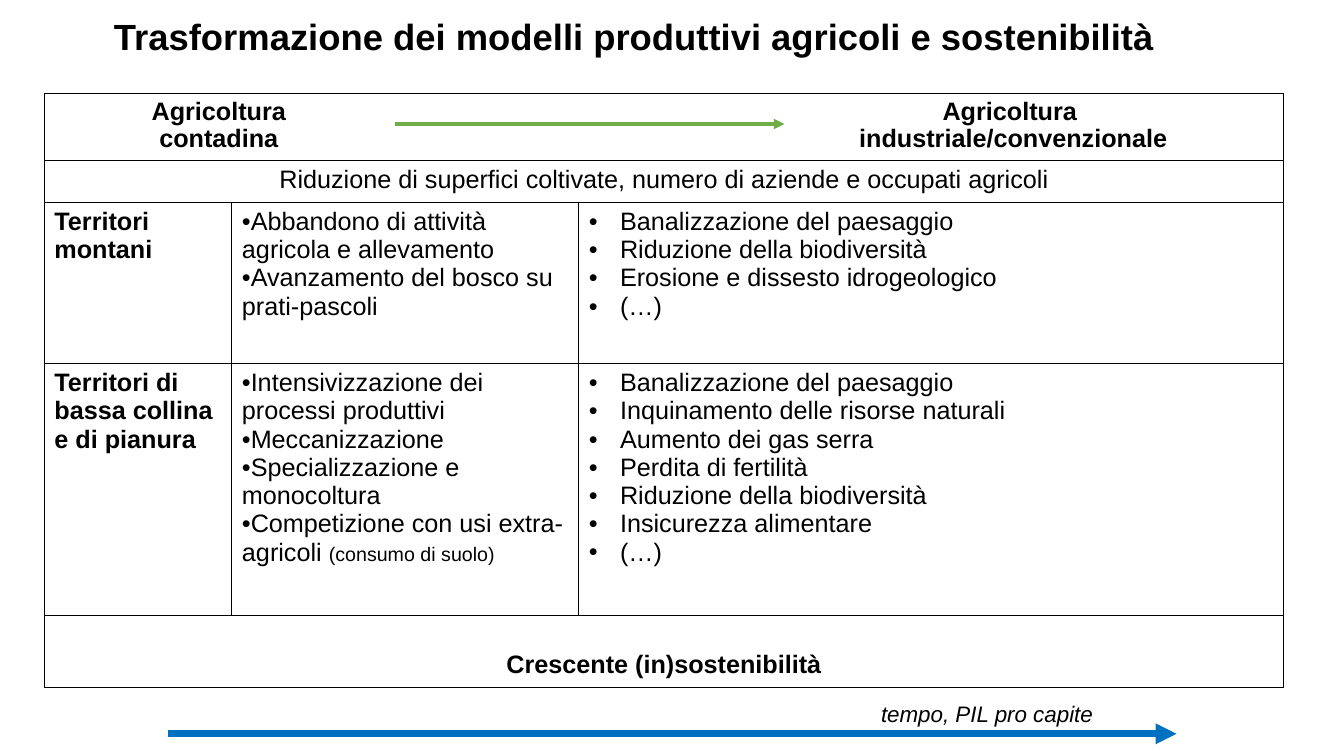
"""Build the slide on farming models and sustainability."""
from lxml import etree
from pptx import Presentation
from pptx import util as u
from pptx.dml.color import RGBColor
from pptx.enum import shapes, text
from pptx.oxml.ns import qn

PX = 9144
NO_GRID = "{2D5ABB26-0587-4C30-8999-92F81FD0307C}"
COLOURS = {"ink": "000000", "time": "0070C0", "shift": "70AD47"}
CENTRE = text.PP_ALIGN.CENTER
MIDDLE = text.MSO_ANCHOR.MIDDLE
BOTTOM = text.MSO_ANCHOR.BOTTOM


class SlideBuilder:
    """Hold the style and the current slide."""

    def __init__(self, deck, font="Arial", size=18):
        self.slide = deck.slides.add_slide(deck.slide_layouts[5])
        self.font = font
        self.size = size

    def box(self, *lengths):
        """Turn px lengths into EMU."""
        return [u.Emu(length * PX) for length in lengths]

    def run(self, paragraph, words, size=None, bold=False, italic=False):
        """Add one styled run."""
        run = paragraph.add_run()
        run.text = words
        run.font.name = self.font
        run.font.size = u.Pt(size or self.size)
        run.font.bold = bold
        run.font.italic = italic
        run.font.color.rgb = RGBColor.from_string(COLOURS["ink"])

    def title(self, words, *place):
        """Move and fill the title placeholder."""
        heading = self.slide.shapes.title
        heading.left, heading.top, heading.width, heading.height = self.box(*place)
        frame = heading.text_frame
        frame.auto_size = text.MSO_AUTO_SIZE.NONE
        frame.vertical_anchor = MIDDLE
        frame.paragraphs[0].alignment = CENTRE
        self.run(frame.paragraphs[0], words, size=26, bold=True)

    def caption(self, words, *place):
        """Add an italic one-line label."""
        label = self.slide.shapes.add_textbox(*self.box(*place))
        label.text_frame.word_wrap = False
        self.run(label.text_frame.paragraphs[0], words, size=16, italic=True)

    def arrow(self, left, right, y, colour, weight):
        """Add a horizontal arrow pointing right."""
        arrow = self.slide.shapes.add_connector(
            shapes.MSO_CONNECTOR.STRAIGHT, *self.box(left, y, right, y))
        arrow.line.color.rgb = RGBColor.from_string(COLOURS[colour])
        arrow.line.width = u.Pt(weight)
        etree.SubElement(arrow.line._get_or_add_ln(), qn("a:tailEnd"), type="triangle")
        etree.SubElement(arrow._element.spPr, qn("a:effectLst"))

    def table(self, left, top, widths, heights):
        """Add an unstyled table with the given grid."""
        frame = self.slide.shapes.add_table(
            len(heights), len(widths), *self.box(left, top, sum(widths), sum(heights)))
        table = frame.table
        table.first_row = table.horz_banding = False
        table._tbl.tblPr.find(qn("a:tableStyleId")).text = NO_GRID
        for column, width in zip(table.columns, widths):
            column.width = u.Emu(width * PX)
        for row, height in zip(table.rows, heights):
            row.height = u.Emu(height * PX)
        return table

    def borders(self, cell, sides):
        """Draw the named cell sides and clear the fill."""
        for side in "LRTB":
            line = etree.SubElement(cell._tc.get_or_add_tcPr(), qn(f"a:ln{side}"), w="12700")
            if side in sides:
                fill = etree.SubElement(line, qn("a:solidFill"))
                etree.SubElement(fill, qn("a:srgbClr"), val=COLOURS["ink"])
            else:
                etree.SubElement(line, qn("a:noFill"))
        cell.fill.background()

    def span(self, table, row, first, last, sides="LR"):
        """Border and merge the cells from first to last."""
        self.borders(table.cell(row, first), sides + "TB")
        for column in range(first + 1, last + 1):
            right = "R" if column == last and "R" in sides else ""
            self.borders(table.cell(row, column), right + "TB")
        cell = table.cell(row, first)
        if last > first:
            cell.merge(table.cell(row, last))
        return cell

    def fill(self, cell, lines, bold=False, align=None, anchor=None):
        """Write plain paragraphs and return them."""
        frame = cell.text_frame
        if anchor is not None:
            cell.vertical_anchor = anchor
        for number, words in enumerate(lines):
            paragraph = frame.add_paragraph() if number else frame.paragraphs[0]
            paragraph.alignment = align
            self.run(paragraph, words, bold=bold)
        return frame.paragraphs

    def bullets(self, cell, items, indent=0):
        """Write bulleted paragraphs with a hanging indent."""
        paragraphs = self.fill(cell, items)
        for paragraph in paragraphs:
            properties = paragraph._p.get_or_add_pPr()
            properties.set("marL", str(indent * PX))
            properties.set("indent", str(-indent * PX))
            etree.SubElement(properties, qn("a:buFont"), typeface=self.font)
            etree.SubElement(properties, qn("a:buChar"), char="•")
        return paragraphs


TERRITORIES = [
    ("Territori montani",
     ["Abbandono di attività agricola e allevamento",
      "Avanzamento del bosco su prati-pascoli"],
     ["Banalizzazione del paesaggio", "Riduzione della biodiversità",
      "Erosione e dissesto idrogeologico", "(…)"]),
    ("Territori di bassa collina e di pianura",
     ["Intensivizzazione dei processi produttivi", "Meccanizzazione",
      "Specializzazione e monocoltura", "Competizione con usi extra-agricoli "],
     ["Banalizzazione del paesaggio", "Inquinamento delle risorse naturali",
      "Aumento dei gas serra", "Perdita di fertilità",
      "Riduzione della biodiversità", "Insicurezza alimentare", "(…)"]),
]


def main():
    """Compose the slide and save it."""
    deck = Presentation()
    deck.slide_width, deck.slide_height = u.Emu(1333 * PX), u.Emu(750 * PX)
    page = SlideBuilder(deck)
    page.title("Trasformazione dei modelli produttivi agricoli e sostenibilità", 92, 0, 1075, 71)

    models = page.table(44, 93, [186, 160, 184, 163, 536], [66, 42, 160, 250, 71])
    peasant = page.span(models, 0, 0, 1, "L")
    page.span(models, 0, 2, 3, "")
    industrial = page.span(models, 0, 4, 4, "R")
    headings = [(peasant, ["Agricoltura", "contadina"]),
                (industrial, ["Agricoltura ", "industriale/convenzionale"])]
    for cell, lines in headings:
        for paragraph in page.fill(cell, lines, True, CENTRE, MIDDLE):
            paragraph.line_spacing = 0.81
            paragraph.space_before = u.Pt(3.5)

    reduction = "Riduzione di superfici coltivate, numero di aziende e occupati agricoli"
    page.fill(page.span(models, 1, 0, 4), [reduction], align=CENTRE)

    for row, (territory, changes, effects) in enumerate(TERRITORIES, 2):
        page.fill(page.span(models, row, 0, 0), [territory], bold=True)
        processes = page.bullets(page.span(models, row, 1, 2), changes)
        page.bullets(page.span(models, row, 3, 4), effects, indent=31)
    page.run(processes[-1], "(consumo di suolo)", size=14)

    outcome = page.span(models, 4, 0, 4)
    outcome.margin_bottom = u.Emu(8 * PX)
    page.fill(outcome, ["Crescente (in)sostenibilità"], True, CENTRE, BOTTOM)

    page.arrow(167, 1167, 728, "time", 5)
    page.caption("tempo, PIL pro capite", 864, 690, 233, 37)
    page.arrow(392, 778, 123, "shift", 2.5)
    deck.save("out.pptx")


if __name__ == "__main__":
    main()
